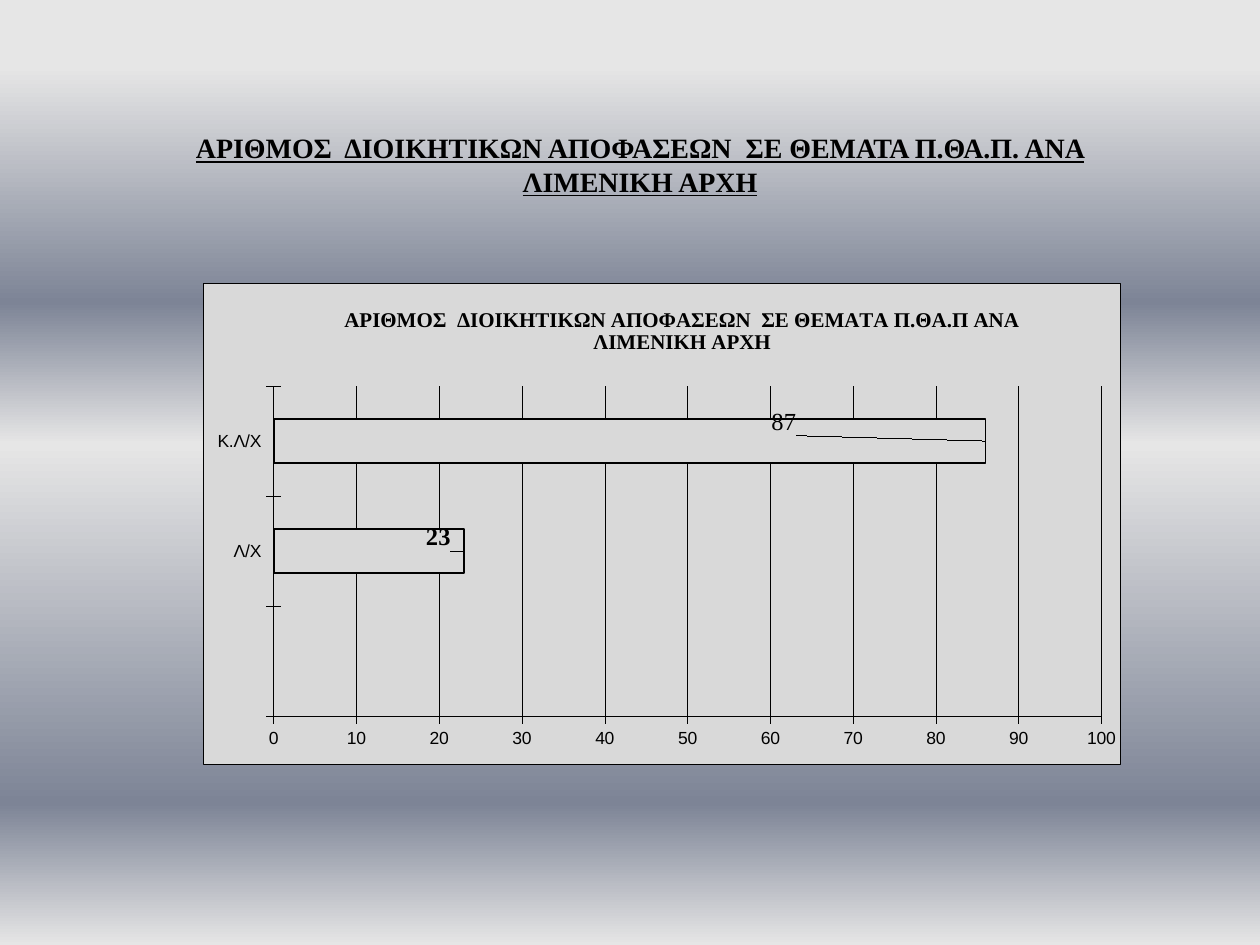
import lxml.etree
import pptx
import pptx.chart.data
import pptx.dml.color
import pptx.enum.chart
import pptx.enum.text
import pptx.oxml
import pptx.oxml.ns
import pptx.util

Inches = pptx.util.Inches
Pt = pptx.util.Pt
qn = pptx.oxml.ns.qn


def color(hex_code):
    return pptx.dml.color.RGBColor.from_string(hex_code)


def set_layout(parent, index, values):
    for old in parent.findall(qn("c:layout")):
        parent.remove(old)
    layout = lxml.etree.Element(qn("c:layout"))
    manual = lxml.etree.SubElement(layout, qn("c:manualLayout"))
    for tag, value in values.items():
        lxml.etree.SubElement(manual, qn("c:" + tag)).set("val", str(value))
    parent.insert(index, layout)


prs = pptx.Presentation()
prs.slide_width, prs.slide_height = Inches(10), Inches(7.5)
slide = prs.slides.add_slide(prs.slide_layouts[6])

background = slide.background.fill
background.gradient()
background.gradient_angle = 270
stops = slide.element.find(".//" + qn("a:gsLst"))
for stop in list(stops):
    stops.remove(stop)
for percent, shade in [(7, "E6E6E6"), (32, "7D8496"), (47, "E6E6E6"), (85, "7D8496"), (100, "E6E6E6")]:
    stop = lxml.etree.SubElement(stops, qn("a:gs"), pos=str(percent * 1000))
    lxml.etree.SubElement(stop, qn("a:srgbClr"), val=shade)

heading = slide.shapes.add_textbox(Inches(1.22), Inches(0.47), Inches(7.72), Inches(1.1)).text_frame
heading_format = {
    "word_wrap": True,
    "vertical_anchor": pptx.enum.text.MSO_ANCHOR.BOTTOM,
    "margin_left": 0,
    "margin_top": Inches(0.05),
    "margin_right": 0,
    "margin_bottom": 0,
}
for name, value in heading_format.items():
    setattr(heading, name, value)
heading.text = "ΑΡΙΘΜΟΣ  ΔΙΟΙΚΗΤΙΚΩΝ ΑΠΟΦΑΣΕΩΝ  ΣΕ ΘΕΜΑΤΑ Π.ΘΑ.Π. ΑΝΑ ΛΙΜΕΝΙΚΗ ΑΡΧΗ"
heading.paragraphs[0].alignment = pptx.enum.text.PP_ALIGN.CENTER
heading_font = heading.paragraphs[0].runs[0].font
heading_font.underline = True

decisions = pptx.chart.data.CategoryChartData()
decisions.categories = ["", "Λ/Χ", "Κ.Λ/Χ"]
decisions.add_series("Series 1", [None, 23, 86])
chart = slide.shapes.add_chart(
    pptx.enum.chart.XL_CHART_TYPE.BAR_CLUSTERED,
    Inches(1.61), Inches(2.25), Inches(7.28), Inches(3.82), decisions,
).chart
chart.has_legend = False

chart_title = chart.chart_title
chart_title.text_frame.text = "ΑΡΙΘΜΟΣ  ΔΙΟΙΚΗΤΙΚΩΝ ΑΠΟΦΑΣΕΩΝ  ΣΕ ΘΕΜΑΤΑ Π.ΘΑ.Π ΑΝΑ ΛΙΜΕΝΙΚΗ ΑΡΧΗ"
chart_title.include_in_layout = False
title_font = chart_title.text_frame.paragraphs[0].runs[0].font
set_layout(chart_title._element, 1, {"xMode": "edge", "yMode": "edge", "x": 0.15, "y": 0.04})

plot_area = chart._chartSpace.find(".//" + qn("c:plotArea"))
set_layout(plot_area, 0, {
    "layoutTarget": "inner", "xMode": "edge", "yMode": "edge",
    "x": 0.077, "y": 0.213, "w": 0.903, "h": 0.687,
})

category_axis, value_axis = chart.category_axis, chart.value_axis
value_axis.has_major_gridlines = True
value_format = {"minimum_scale": 0, "maximum_scale": 100, "major_unit": 10}
for name, value in value_format.items():
    setattr(value_axis, name, value)
category_axis.tick_label_position = pptx.enum.chart.XL_TICK_LABEL_POSITION.LOW
for axis in (category_axis, value_axis):
    axis.major_tick_mark = pptx.enum.chart.XL_TICK_MARK.CROSS

plot = chart.plots[0]
plot.vary_by_categories = False
plot.gap_width = 150
decision_bars = plot.series[0]
decision_bars.format.fill.solid()
decision_bars.format.fill.fore_color.rgb = color("D9D9D9")
lines = [
    (category_axis.format.line, 0.25),
    (value_axis.format.line, 0.25),
    (value_axis.major_gridlines.format.line, 0.25),
    (decision_bars.format.line, 1),
]
for line, width in lines:
    line.color.rgb = color("000000")
    line.width = Pt(width)

bar_labels = decision_bars.data_labels
bar_labels.show_value = True
bar_labels.position = pptx.enum.chart.XL_LABEL_POSITION.OUTSIDE_END
lower_label, upper_label = (decision_bars.points[i].data_label for i in (1, 2))
lower_font = lower_label.font
upper_label.text_frame.text = "87"
upper_font = upper_label.text_frame.paragraphs[0].runs[0].font
for label in (lower_label, upper_label):
    label.position = pptx.enum.chart.XL_LABEL_POSITION.OUTSIDE_END
label_offsets = [(-0.047, -0.029), (-0.239, -0.04)]
for label, (x, y) in zip(decision_bars._element.xpath("c:dLbls/c:dLbl"), label_offsets):
    set_layout(label, 1, {"x": x, "y": y})

fonts = [
    (heading_font, "Times New Roman", 16, True),
    (title_font, "Times New Roman", 12, True),
    (bar_labels.font, "Times New Roman", 14, True),
    (lower_font, "Times New Roman", 14, True),
    (upper_font, "Times New Roman", 14, False),
    (chart.font, "Arial", 10, False),
    (category_axis.tick_labels.font, "Arial", 10, False),
    (value_axis.tick_labels.font, "Arial", 10, False),
]
for font, typeface, size, bold in fonts:
    for name, value in {"name": typeface, "size": Pt(size), "bold": bold}.items():
        setattr(font, name, value)
    font.color.rgb = color("000000")

frame = lxml.etree.Element(qn("c:spPr"))
frame_fill = lxml.etree.SubElement(frame, qn("a:solidFill"))
lxml.etree.SubElement(frame_fill, qn("a:srgbClr"), val="D9D9D9")
border = lxml.etree.SubElement(frame, qn("a:ln"), w=str(Pt(0.25)))
border_fill = lxml.etree.SubElement(border, qn("a:solidFill"))
lxml.etree.SubElement(border_fill, qn("a:srgbClr"), val="000000")
chart._chartSpace.find(qn("c:chart")).addnext(frame)

prs.save("out.pptx")
